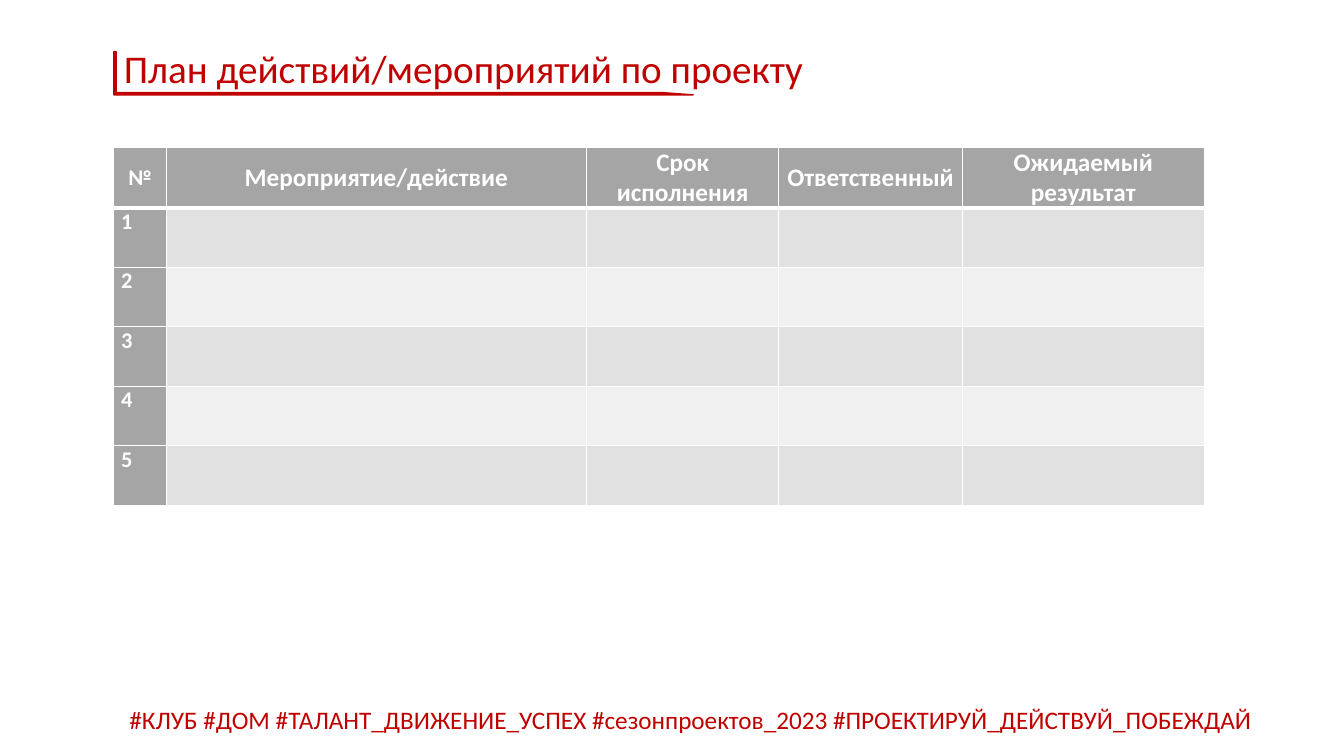
from dataclasses import dataclass

from lxml.etree import SubElement
from pptx import Presentation
from pptx.dml.color import RGBColor
from pptx.enum.shapes import MSO_SHAPE as Shape
from pptx.enum.text import MSO_ANCHOR as Anchor, MSO_AUTO_SIZE as AutoSize, PP_ALIGN as Align
from pptx.oxml.ns import qn
from pptx.util import Cm, Pt


@dataclass(frozen=True)
class Theme:
    """Colours, font and type sizes of the slide."""
    font: str = "Calibri"
    accent: str = "C00000"
    white: str = "FFFFFF"
    header: str = "A5A5A5"
    bands: tuple = ("E1E1E1", "F0F0F0")
    title_size: int = 28
    text_size: int = 18
    number_size: int = 16


THEME = Theme()
COLUMNS = (
    ("№", 1.32),
    ("Мероприятие/действие", 10.59),
    ("Срок исполнения", 4.85),
    ("Ответственный ", 4.62),
    ("Ожидаемый результат", 6.1),
)
ACTION_COUNT = 5
ROW_HEIGHT = 1.5


def write(frame, text, size=THEME.text_size, color=THEME.accent, bold=False,
          align=Align.LEFT, spacing=None):
    """Put formatted text into a text frame."""
    paragraph = frame.paragraphs[0]
    paragraph.alignment = align
    paragraph.line_spacing = spacing
    run = paragraph.add_run()
    run.text = text
    run.font.name = THEME.font
    run.font.size = Pt(size)
    run.font.bold = bold
    run.font.color.rgb = RGBColor.from_string(color)


def add_text_box(slide, left, top, width, height):
    """Add a wrapping text box and return its frame."""
    frame = slide.shapes.add_textbox(Cm(left), Cm(top), Cm(width), Cm(height)).text_frame
    frame.word_wrap = True
    return frame


def add_title(slide, left, top, width, height):
    """Add the title and the corner frame that underlines it."""
    frame = add_text_box(slide, left, top, width, height)
    frame.auto_size = AutoSize.SHAPE_TO_FIT_TEXT
    write(frame, "План действий/мероприятий по проекту", size=THEME.title_size)

    length, depth = 14.6, 1.09
    offset = (length - depth) / 2
    corner = slide.shapes.add_shape(
        Shape.HALF_FRAME, Cm(left + offset), Cm(top + 0.31 - offset), Cm(depth), Cm(length))
    corner.rotation = 270
    corner.adjustments[0] = corner.adjustments[1] = 0.055
    corner.shadow.inherit = False
    corner.fill.solid()
    corner.fill.fore_color.rgb = RGBColor.from_string(THEME.accent)
    corner.line.color.rgb = RGBColor.from_string(THEME.accent)
    corner.line.width = Pt(1)


def style_cell(cell, fill, top=1, bottom=1):
    """Set the fill, margins and white borders of a cell."""
    cell.margin_left = cell.margin_right = Cm(0.18)
    cell.margin_top = cell.margin_bottom = 0
    properties = cell._tc.get_or_add_tcPr()
    for side, width in (("L", 1), ("R", 1), ("T", top), ("B", bottom)):
        border = SubElement(properties, qn(f"a:ln{side}"), w=str(Pt(width)))
        SubElement(SubElement(border, qn("a:solidFill")), qn("a:srgbClr"), val=THEME.white)
    cell.fill.solid()
    cell.fill.fore_color.rgb = RGBColor.from_string(fill)


def add_plan_table(slide, left, top):
    """Add the action plan with its header row and numbered rows."""
    row_count = ACTION_COUNT + 1
    width = sum(column_width for _, column_width in COLUMNS)
    table = slide.shapes.add_table(
        row_count, len(COLUMNS), Cm(left), Cm(top), Cm(width), Cm(ROW_HEIGHT * row_count)).table
    for row in table.rows:
        row.height = Cm(ROW_HEIGHT)
    for index, (heading, column_width) in enumerate(COLUMNS):
        table.columns[index].width = Cm(column_width)
        cell = table.cell(0, index)
        style_cell(cell, THEME.header, bottom=3)
        cell.vertical_anchor = Anchor.MIDDLE
        write(cell.text_frame, heading, size=THEME.text_size if index else THEME.number_size,
              color=THEME.white, bold=True, align=Align.CENTER)
        for number in range(1, row_count):
            cell = table.cell(number, index)
            fill = THEME.bands[(number - 1) % 2] if index else THEME.header
            style_cell(cell, fill, top=3 if number == 1 else 1)
            if index == 0:
                write(cell.text_frame, str(number), size=THEME.number_size,
                      color=THEME.white, bold=True)


def add_hashtags(slide, left, top, width, height):
    """Add the line of hashtags at the foot of the slide."""
    frame = add_text_box(slide, left, top, width, height)
    frame.vertical_anchor = Anchor.BOTTOM
    write(frame, "#КЛУБ #ДОМ #ТАЛАНТ_ДВИЖЕНИЕ_УСПЕХ #сезонпроектов_2023 "
                 "#ПРОЕКТИРУЙ_ДЕЙСТВУЙ_ПОБЕЖДАЙ ", align=Align.CENTER, spacing=0.9)


def main():
    """Build and save the slide."""
    presentation = Presentation()
    presentation.slide_width, presentation.slide_height = Cm(33.87), Cm(19.05)
    slide = presentation.slides.add_slide(presentation.slide_layouts[6])
    left = 2.87
    add_title(slide, left, 0.99, 24.36, 1.45)
    add_plan_table(slide, left, 3.71)
    add_hashtags(slide, left, 17.68, 29.21, 0.97)
    presentation.save("out.pptx")


if __name__ == "__main__":
    main()
